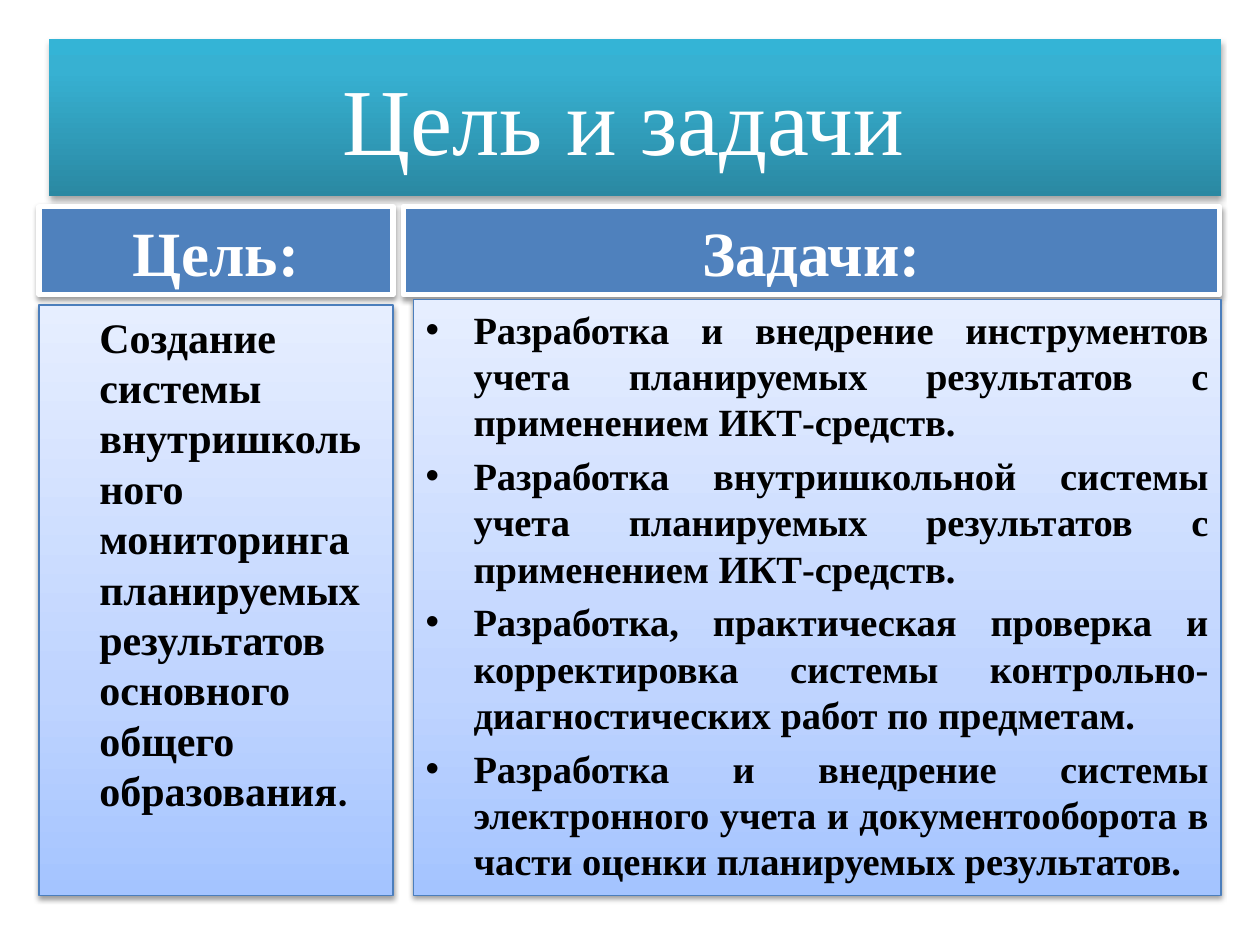
from copy import deepcopy
from pptx import Presentation
from pptx.dml.color import RGBColor
from pptx.enum.shapes import MSO_SHAPE as SHAPE
from pptx.enum.text import MSO_ANCHOR as ANCHOR, PP_ALIGN as ALIGN
from pptx.oxml import parse_xml
from pptx.oxml.ns import nsdecls
from pptx.util import Inches, Pt

TEAL = [(0, "2A88A2"), (0.8, "37B1D2"), (1, "34B4D6")]
PALE = [(0, "A4C4FF"), (0.35, "BFD4FF"), (1, "E6EEFF")]
BLUE, EDGE, WHITE, BLACK = "4F81BD", "4B7EBC", "FFFFFF", "000000"
SERIF, SANS = "Times New Roman", "Calibri"
INDENT = 0.38


def rgb(color):
    return RGBColor.from_string(color)


class Deck:
    def __init__(self, width, height):
        self.prs = Presentation()
        self.prs.slide_width, self.prs.slide_height = Inches(width), Inches(height)
        self.s = self.prs.slides.add_slide(self.prs.slide_layouts[6])

    def box(self, x, y, w, h, line=None, weight=0, alpha=38, drop=1.6):
        sp = self.s.shapes.add_shape(SHAPE.RECTANGLE, *map(Inches, (x, y, w, h)))
        if line:
            sp.line.color.rgb, sp.line.width = rgb(line), Pt(weight)
        else:
            sp.line.fill.background()
        sp.shadow.inherit = False
        effects = sp._element.spPr.find("{*}effectLst")
        effects.append(parse_xml(
            f'<a:outerShdw {nsdecls("a")} blurRad="{Pt(3.1)}" dist="{Pt(drop)}" '
            f'dir="5400000" rotWithShape="0"><a:srgbClr val="{BLACK}">'
            f'<a:alpha val="{alpha * 1000}"/></a:srgbClr></a:outerShdw>'))
        sp.text_frame.word_wrap = True
        return sp

    def gradient(self, sp, stops):
        sp.fill.gradient()
        sp.fill.gradient_angle = 90
        gs = sp._element.spPr.find(".//{*}gsLst")
        gs.append(deepcopy(gs[-1]))
        for stop, (position, color) in zip(sp.fill.gradient_stops, stops):
            stop.position, stop.color.rgb = position, rgb(color)

    def text(self, p, runs, size, color, bold=True, align=ALIGN.LEFT):
        p.alignment = align
        for words, font in runs:
            r = p.add_run()
            r.text = words
            r.font.name, r.font.size, r.font.bold = font, Pt(size), bold
            r.font.color.rgb = rgb(color)

    def title(self, x, y, w, h, words):
        sp = self.box(x, y, w, h, alpha=35, drop=1.8)
        self.gradient(sp, TEAL)
        sp.text_frame.vertical_anchor = ANCHOR.MIDDLE
        self.text(sp.text_frame.paragraphs[0], [(words, SERIF)], 54, WHITE, False, ALIGN.CENTER)

    def header(self, x, y, w, h, words):
        sp = self.box(x, y, w, h, WHITE, 3)
        sp.fill.solid()
        sp.fill.fore_color.rgb = rgb(BLUE)
        sp.text_frame.vertical_anchor = ANCHOR.BOTTOM
        self.text(sp.text_frame.paragraphs[0], [(words, SERIF)], 36, WHITE, align=ALIGN.CENTER)

    def panel(self, x, y, w, h, paragraphs, size, align=ALIGN.LEFT, bullet=None):
        sp = self.box(x, y, w, h, EDGE, 0.75)
        self.gradient(sp, PALE)
        tf = sp.text_frame
        tf.vertical_anchor = ANCHOR.TOP
        for i, runs in enumerate(paragraphs):
            p = tf.add_paragraph() if i else tf.paragraphs[0]
            p.space_before = Pt(size * 0.2)
            self.text(p, runs, size, BLACK, align=align)
            pPr = p._p.get_or_add_pPr()
            pPr.set("marL", str(Inches(INDENT)))
            if bullet:
                pPr.set("indent", str(-Inches(INDENT)))
                pPr.append(parse_xml(f'<a:buFont {nsdecls("a")} typeface="Arial"/>'))
                pPr.append(parse_xml(f'<a:buChar {nsdecls("a")} char="{bullet}"/>'))


def main():
    deck = Deck(10, 7.5)
    deck.title(0.39, 0.31, 9.3, 1.25, "Цель и задачи ")
    deck.header(0.31, 1.64, 2.81, 0.7, "Цель:")
    deck.panel(0.31, 2.42, 2.81, 4.69, [[
        ("Создание системы внутришкольного мониторинга планируемых результатов "
         "основного общего образования", SERIF),
        (".", SANS)]], 24)
    deck.header(3.2, 1.64, 6.48, 0.7, "Задачи:")
    tasks = [
        "Разработка и внедрение инструментов учета планируемых результатов "
        "с применением ИКТ-средств.",
        "Разработка внутришкольной системы учета планируемых результатов "
        "с применением ИКТ-средств.",
        "Разработка, практическая проверка и корректировка системы "
        "контрольно-диагностических работ по предметам.",
        "Разработка и внедрение системы электронного учета и документооборота "
        "в части оценки планируемых результатов.",
    ]
    deck.panel(3.28, 2.38, 6.41, 4.73, [[(task, SERIF)] for task in tasks], 22,
               ALIGN.JUSTIFY, "•")
    deck.prs.save("out.pptx")


if __name__ == "__main__":
    main()
